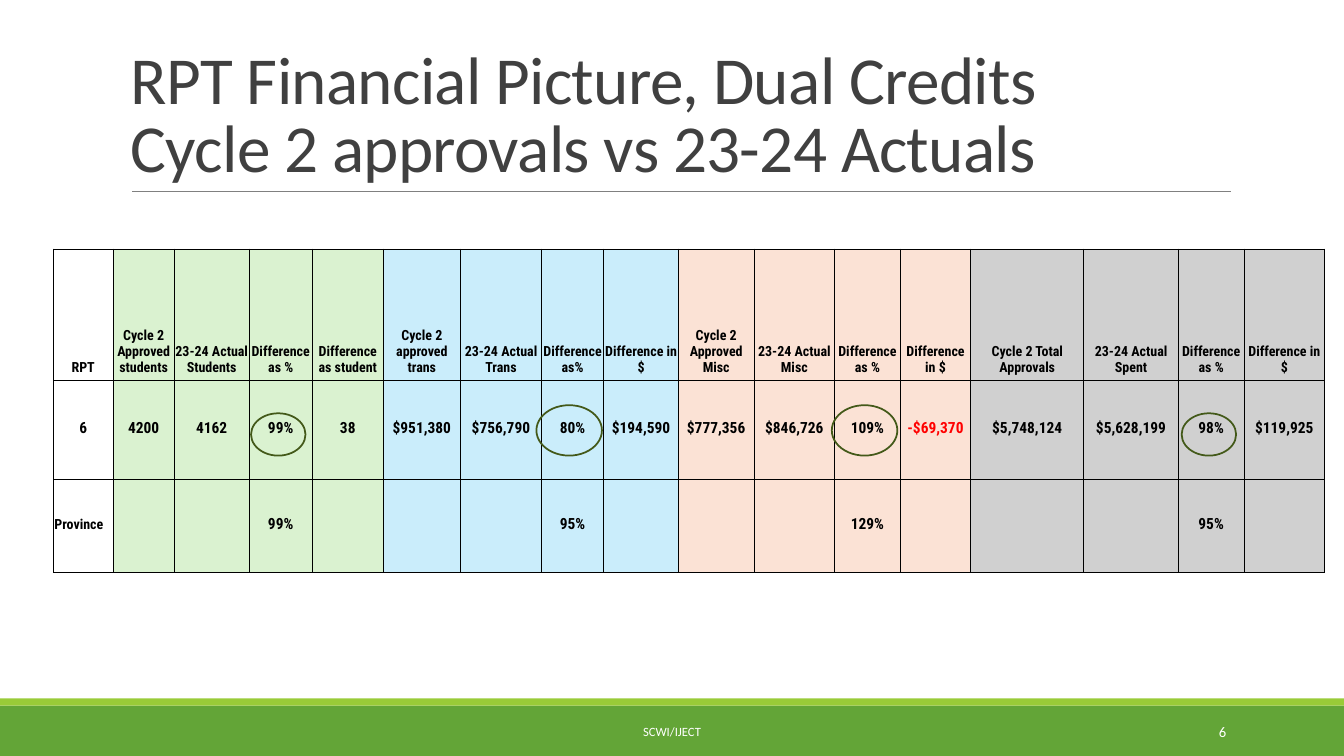
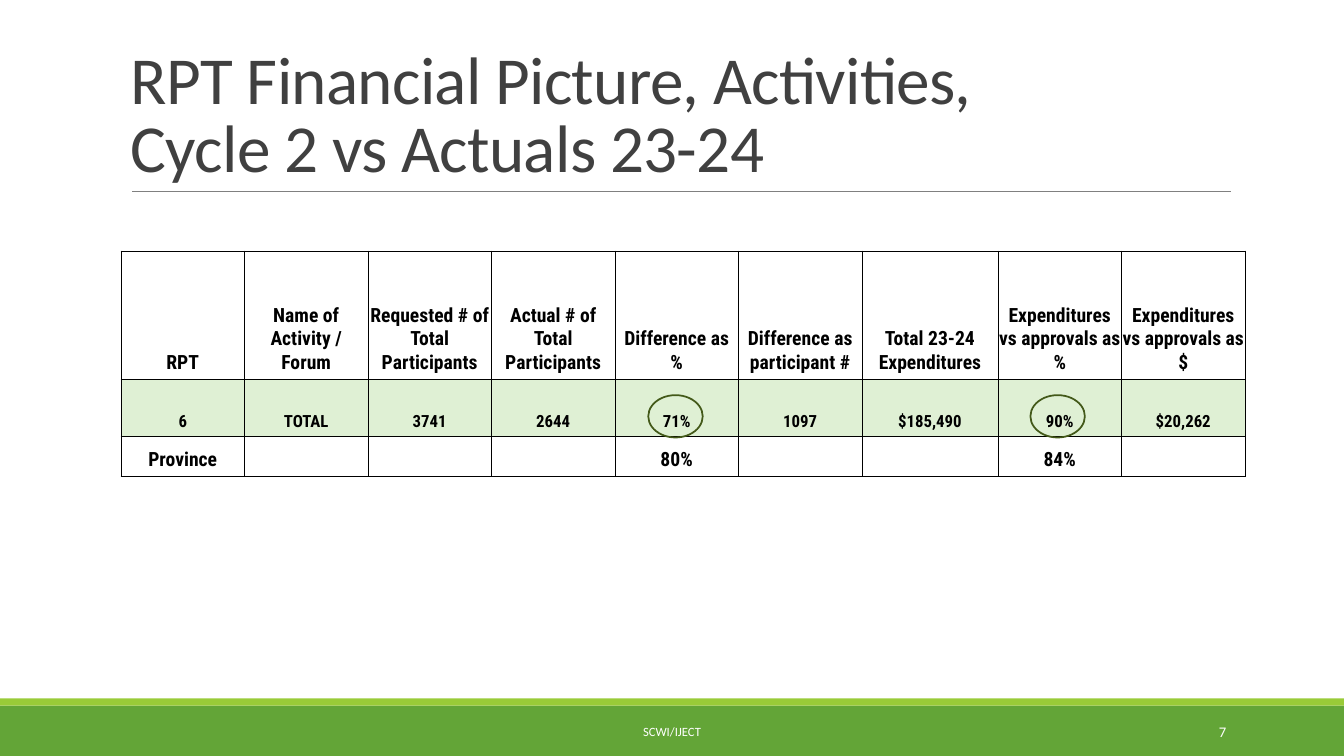
from lxml.etree import SubElement
from pptx import Presentation
from pptx.dml.color import RGBColor
from pptx.enum.shapes import MSO_CONNECTOR, MSO_SHAPE
from pptx.enum.text import MSO_ANCHOR as Anchor, PP_ALIGN as Align
from pptx.oxml.ns import qn
from pptx.util import Inches, Pt

COLORS = {
    "band": "63A537", "stripe": "99CB38", "rule": "808080",
    "title": "404040", "white": "FFFFFF", "black": "000000",
    "negative": "FF0000", "ring": "435919",
    "students": "DAF2D0", "transport": "CAEDFB", "misc": "FBE2D5",
    "total": "D0D0D0", "activity": "DFF0D4",
}
COLORS = {name: RGBColor.from_string(value) for name, value in COLORS.items()}
BODY_FONT, TABLE_FONT = "Calibri", "Roboto Condensed"
small_ring, large_ring = (0.54, 0.42), (0.65, 0.5)

# Column groups of the dual credit table: fill and number of columns
groups = [(None, 1), ("students", 4), ("transport", 4), ("misc", 4), ("total", 4)]
group_fills = [fill for fill, count in groups for column in range(count)]

slides = [
    {
        "number": "6",
        "title": ["RPT Financial Picture, Dual Credits", "Cycle 2 approvals vs 23-24 Actuals"],
        "corner": (0.53, 2.47),
        "columns": [0.59, 0.61, 0.74, 0.63, 0.7, 0.77, 0.8, 0.62, 0.74,
                    0.75, 0.8, 0.65, 0.7, 1.12, 0.94, 0.65, 0.8],
        "heights": [1.3, 0.99, 0.92],
        "anchors": [Anchor.BOTTOM, Anchor.MIDDLE, Anchor.MIDDLE],
        "sizes": [10, 11, 11],
        "label": (10, Align.LEFT),
        "fills": [group_fills] * 3,
        "bottom_margin": 0.04,
        "rows": [
            ["RPT",
             "Cycle 2 Approved students", "23-24 Actual Students", "Difference as %", "Difference as student",
             "Cycle 2 approved trans", "23-24 Actual Trans", "Difference as%", "Difference in $",
             "Cycle 2 Approved Misc", "23-24 Actual Misc", "Difference as %", "Difference in $",
             "Cycle 2 Total Approvals", "23-24 Actual Spent", "Difference as %", "Difference in $"],
            ["6", "4200", "4162", "99%", "38",
             "$951,380", "$756,790", "80%", "$194,590",
             "$777,356", "$846,726", "109%", "-$69,370",
             "$5,748,124", "$5,628,199", "98%", "$119,925"],
            ["Province", "", "", "99%", "", "", "", "95%", "",
             "", "", "129%", "", "", "", "95%", ""],
        ],
        "rings": [(2.49, 4.1, *small_ring), (8.25, 4.02, *large_ring),
                  (11.72, 4.1, *small_ring), (5.32, 4.02, *large_ring)],
    },
    {
        "number": "7",
        "title": ["RPT Financial Picture, Activities,", "Cycle 2 vs Actuals 23-24"],
        "corner": (1.2, 2.49),
        "columns": [1.225] * 6 + [1.35] + [1.225] * 2,
        "heights": [1.27, 0.57, 0.4],
        "anchors": [Anchor.BOTTOM] * 3,
        "sizes": [14, 12, 14],
        "label": (14, Align.CENTER),
        "fills": [[None] * 9, ["activity"] * 9, [None] * 9],
        "bottom_margin": 0.05,
        "rows": [
            ["RPT", "Name of Activity / Forum", "Requested # of Total Participants",
             "Actual # of Total Participants", "Difference as %", "Difference as participant #",
             "Total 23-24 Expenditures", "Expenditures vs approvals as %", "Expenditures vs approvals as $"],
            ["6", "TOTAL", "3741", "2644", "71%", "1097", "$185,490", "90%", "$20,262"],
            ["Province", "", "", "", "80%", "", "", "84%", ""],
        ],
        "rings": [(6.43, 3.92, *small_ring), (10.22, 3.92, *small_ring)],
    },
]


def add_run(paragraph, text, size, color, font=BODY_FONT, bold=False):
    run = paragraph.add_run()
    run.text = text
    run.font.name, run.font.size, run.font.bold = font, Pt(size), bold
    run.font.color.rgb = COLORS[color]
    return run


def add_text_box(slide, box, anchor, align):
    frame = slide.shapes.add_textbox(*map(Inches, box)).text_frame
    frame.word_wrap = True
    frame.vertical_anchor = anchor
    frame.paragraphs[0].alignment = align
    return frame.paragraphs[0]


presentation = Presentation()
presentation.slide_width, presentation.slide_height = Inches(13.33), Inches(7.5)

for content in slides:
    slide = presentation.slides.add_slide(presentation.slide_layouts[6])

    # Bands at the foot
    for color, top, height in [("band", 7, 0.5), ("stripe", 6.93, 0.07)]:
        band = slide.shapes.add_shape(
            MSO_SHAPE.RECTANGLE, 0, Inches(top), presentation.slide_width, Inches(height))
        band.shadow.inherit = False
        band.fill.solid()
        band.fill.fore_color.rgb = COLORS[color]
        band.line.fill.background()

    # Title and the rule below it
    rule = slide.shapes.add_connector(
        MSO_CONNECTOR.STRAIGHT, Inches(1.31), Inches(1.9), Inches(12.21), Inches(1.9))
    rule.line.color.rgb = COLORS["rule"]
    rule.line.width = Pt(0.5)
    SubElement(rule._element.spPr, qn("a:effectLst"))
    paragraph = add_text_box(slide, (1.2, 0.31, 11, 1.59), Anchor.BOTTOM, Align.LEFT)
    paragraph.line_spacing = 0.85
    for index, line in enumerate(content["title"]):
        if index:
            paragraph.add_line_break()
        run = add_run(paragraph, line, 48, "title")
        run.font._element.set("spc", "-50")

    # Footer and slide number
    paragraph = add_text_box(slide, (4.03, 7.06, 5.27, 0.4), Anchor.MIDDLE, Align.CENTER)
    add_run(paragraph, "SCWI/IJECT", 9, "white")
    paragraph = add_text_box(slide, (10.83, 7.06, 1.43, 0.4), Anchor.MIDDLE, Align.RIGHT)
    add_run(paragraph, content["number"], 10.5, "white")

    # Table frame
    rows, columns, heights = content["rows"], content["columns"], content["heights"]
    left, top = content["corner"]
    table = slide.shapes.add_table(
        len(rows), len(columns), Inches(left), Inches(top),
        Inches(sum(columns)), Inches(sum(heights))).table
    table.first_row = table.horz_banding = False
    for column, width in zip(table.columns, columns):
        column.width = Inches(width)
    for row, height in zip(table.rows, heights):
        row.height = Inches(height)

    # Table cells
    for row_index, texts in enumerate(rows):
        for column_index, text in enumerate(texts):
            cell = table.cell(row_index, column_index)
            cell.vertical_anchor = content["anchors"][row_index]
            cell.margin_left = cell.margin_right = cell.margin_top = Inches(0.01)
            cell.margin_bottom = Inches(content["bottom_margin"])
            for side in ("lnL", "lnR", "lnT", "lnB"):
                border = SubElement(cell._tc.get_or_add_tcPr(), qn("a:" + side), w=str(Pt(0.5)))
                border_fill = SubElement(border, qn("a:solidFill"))
                SubElement(border_fill, qn("a:srgbClr"), val=str(COLORS["black"]))
            fill = content["fills"][row_index][column_index]
            if fill:
                cell.fill.solid()
                cell.fill.fore_color.rgb = COLORS[fill]
            else:
                cell.fill.background()
            size, align = content["sizes"][row_index], Align.CENTER
            if text == "Province":
                size, align = content["label"]
            paragraph = cell.text_frame.paragraphs[0]
            paragraph.alignment = align
            if text:
                color = "negative" if text.startswith("-") else "black"
                add_run(paragraph, text, size, color, TABLE_FONT, True)

    # Rings around the key percentages
    for box in content["rings"]:
        ring = slide.shapes.add_shape(MSO_SHAPE.OVAL, *map(Inches, box))
        ring.shadow.inherit = False
        ring.fill.background()
        ring.line.color.rgb = COLORS["ring"]
        ring.line.width = Pt(1.25)

presentation.save("out.pptx")
